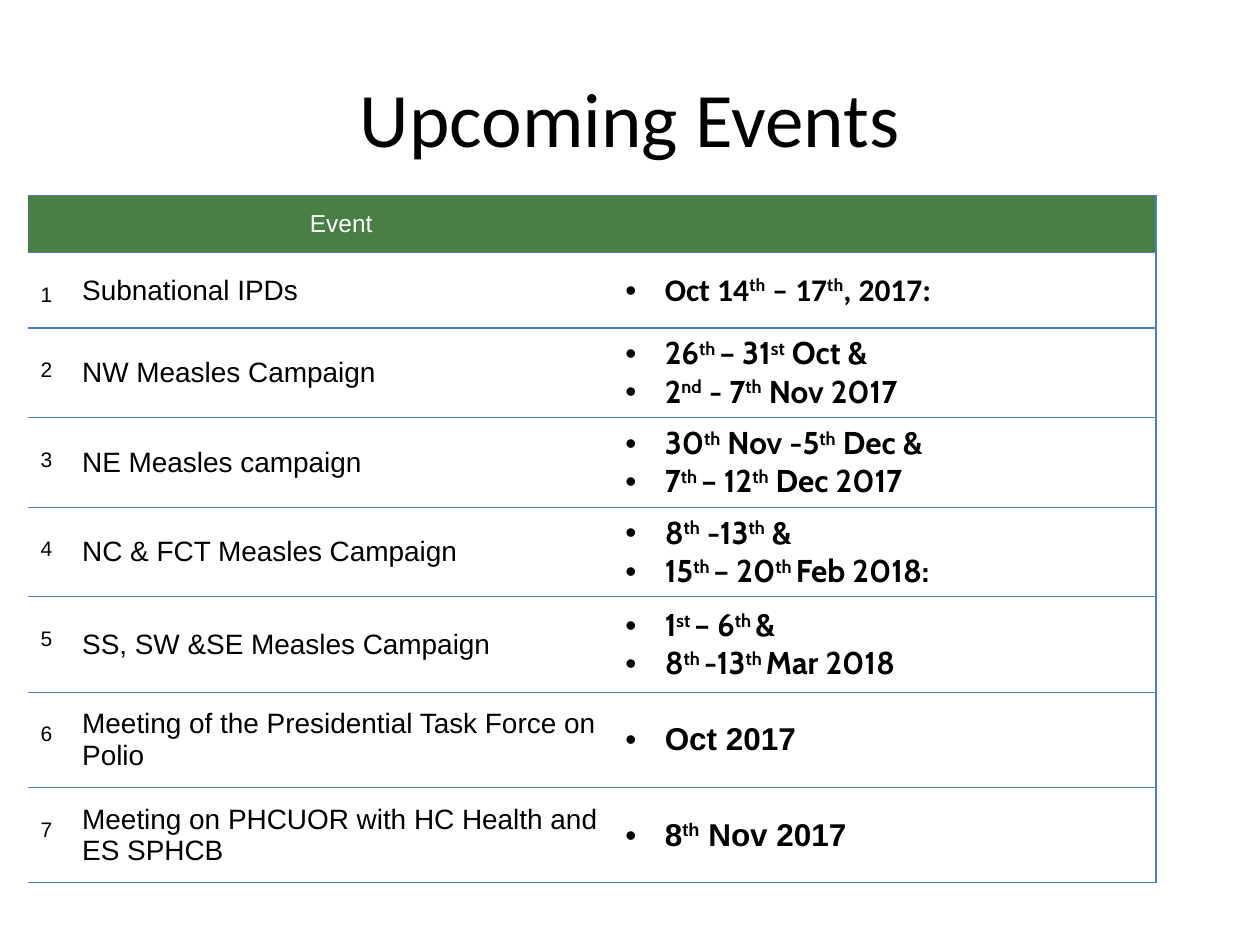
from lxml.etree import SubElement
from pptx import Presentation
from pptx.dml.color import RGBColor
from pptx.enum.text import MSO_ANCHOR, PP_ALIGN
from pptx.oxml.ns import qn
from pptx.util import Pt


def rgb(value):
    return RGBColor.from_string(value)


def write(tf, text, size=16, font="Arial", color="000000", bold=False,
          align=PP_ALIGN.LEFT, bullet=False):
    for i, line in enumerate(text.split("\n")):
        p = tf.paragraphs[0] if i == 0 else tf.add_paragraph()
        p.alignment = align
        if bullet:
            pPr = p._p.get_or_add_pPr()
            pPr.set("marL", str(Pt(22.5)))
            pPr.set("indent", str(-Pt(22.5)))
            SubElement(pPr, qn("a:buFont"), typeface="Arial")
            SubElement(pPr, qn("a:buChar"), char="•")
        for j, part in enumerate(line.split("^")):
            if not part:
                continue
            r = p.add_run()
            r.text = part
            r.font.size = Pt(size)
            r.font.name = font
            r.font.bold = bold
            r.font.color.rgb = rgb(color)
            if j % 2:
                r._r.get_or_add_rPr().set("baseline", "30000")


prs = Presentation()
prs.slide_width, prs.slide_height = Pt(720), Pt(540)
s = prs.slides.add_slide(prs.slide_layouts[6])

title = s.shapes.add_textbox(Pt(36), Pt(21.6), Pt(648), Pt(90))
title.text_frame.word_wrap = True
title.text_frame.vertical_anchor = MSO_ANCHOR.MIDDLE
write(title.text_frame, "Upcoming Events", size=44, font="Calibri", align=PP_ALIGN.CENTER)

events = [
    ("Subnational IPDs", "Oct 14^th^ – 17^th^, 2017:", "Calibri"),
    ("NW Measles Campaign", "26^th ^– 31^st^ Oct &\n2^nd^ - 7^th^ Nov 2017", "Cabin"),
    ("NE Measles campaign", "30^th^ Nov -5^th^ Dec &\n7^th ^– 12^th^ Dec 2017", "Cabin"),
    ("NC & FCT Measles Campaign", "8^th^ -13^th^ &\n15^th ^– 20^th ^Feb 2018:", "Cabin"),
    ("SS, SW &SE Measles Campaign", "1^st ^– 6^th ^&\n8^th ^-13^th ^Mar 2018", "Cabin"),
    ("Meeting of the Presidential Task Force on Polio", "Oct 2017", "Arial"),
    ("Meeting on PHCUOR with HC Health and ES SPHCB", "8^th^ Nov 2017", "Arial"),
]
widths = [23.8, 310.4, 310.4]
heights = [33, 43, 51.2, 51.2, 51.2, 54.5, 54.5, 54.5]

table = s.shapes.add_table(len(heights), len(widths), Pt(16), Pt(111.5),
                           Pt(sum(widths)), Pt(sum(heights))).table
table.first_row = table.horz_banding = False
for col, width in zip(table.columns, widths):
    col.width = Pt(width)
for row, height in zip(table.rows, heights):
    row.height = Pt(height)

for i, row in enumerate(table.rows):
    for j, cell in enumerate(row.cells):
        cell.vertical_anchor = MSO_ANCHOR.MIDDLE
        tcPr = cell._tc.get_or_add_tcPr()
        for side in "LRTB":
            ln = SubElement(tcPr, qn("a:ln" + side), w=str(Pt(0.75)))
            if side in "TB" or (side == "R" and j == 2):
                fill = SubElement(ln, qn("a:solidFill"))
                SubElement(fill, qn("a:srgbClr"), val="4B7EBC")
            else:
                SubElement(ln, qn("a:noFill"))
        if i == 0:
            cell.fill.solid()
            cell.fill.fore_color.rgb = rgb("477F45")
        else:
            cell.fill.background()

write(table.cell(0, 1).text_frame, "Event", size=14, color="FFFFFF", align=PP_ALIGN.CENTER)
for i, (event, dates, font) in enumerate(events, 1):
    number = table.cell(i, 0)
    number.vertical_anchor = MSO_ANCHOR.TOP
    number.margin_top = Pt(17.4)
    write(number.text_frame, str(i), size=12)
    write(table.cell(i, 1).text_frame, event)
    write(table.cell(i, 2).text_frame, dates, size=18, font=font, bold=True, bullet=True)

prs.save("out.pptx")
